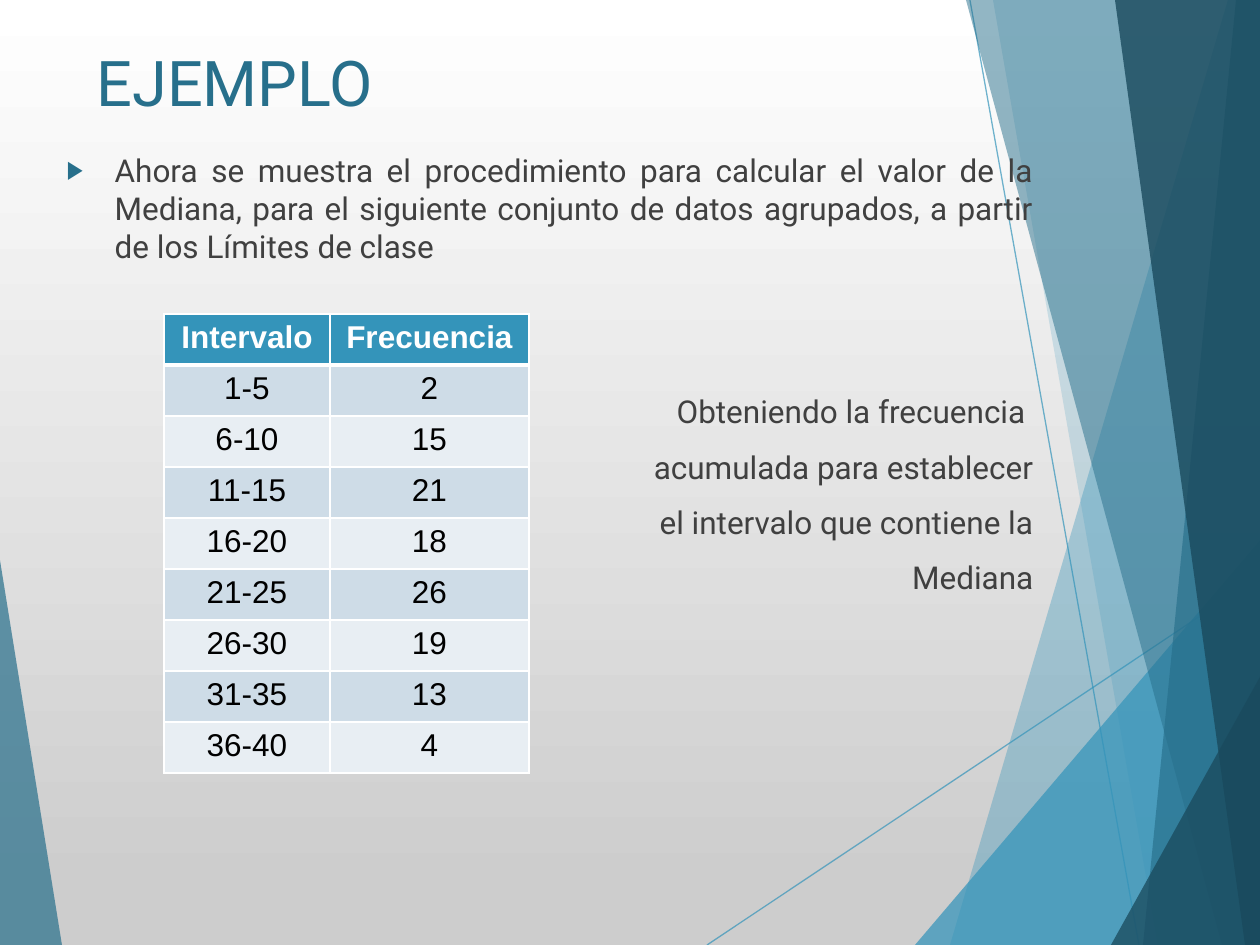
"""Build the slide on the median of grouped data, with its frequency table."""
from dataclasses import dataclass

from lxml.etree import SubElement
from pptx import Presentation
from pptx.dml.color import RGBColor as RGB
from pptx.enum.shapes import MSO_CONNECTOR as LINK
from pptx.enum.text import MSO_ANCHOR as ANCHOR, MSO_AUTO_SIZE as AUTO, PP_ALIGN as ALIGN
from pptx.oxml.ns import qn
from pptx.util import Pt

PX = 914400 / 126
WIDE, HIGH = 1260, 945


@dataclass(frozen=True)
class Theme:
    sky: str = "3494BA"
    teal: str = "276F8B"
    navy: str = "1A4A5D"
    white: str = "FFFFFF"
    grey: str = "CDCDCD"
    text: str = "404040"
    black: str = "000000"
    odd: str = "CEDCE7"
    even: str = "E8EEF3"
    sans: str = "Roboto"
    grid: str = "Arial"
    head: int = 36
    body: int = 18


def fade(shape, pct):
    for tag in shape.element.iter(qn("a:srgbClr")):
        SubElement(tag, qn("a:alpha"), val=str(pct * 1000))


def write(para, words, font, size, color, bold=False):
    run = para.add_run()
    run.text = words
    run.font.name, run.font.size, run.font.bold = font, Pt(size), bold
    run.font.color.rgb = RGB.from_string(color)


look = Theme()
deck = Presentation()
deck.slide_width, deck.slide_height = round(WIDE * PX), round(HIGH * PX)
slide = deck.slides.add_slide(deck.slide_layouts[1])
shapes = slide.shapes
title, body = slide.placeholders

back = slide.background.fill
back.gradient()
back.gradient_angle = 270
for stop, color, place in zip(back.gradient_stops, (look.white, look.grey), (0, 0.94)):
    stop.color.rgb = RGB.from_string(color)
    stop.position = place

for ends in ((707, HIGH, WIDE, 576), (970, 0, 1139, HIGH)):
    line = shapes.add_connector(LINK.STRAIGHT, *(round(n * PX) for n in ends))
    line.line.color.rgb = RGB.from_string(look.sky)
    line.line.width = Pt(0.75)
    SubElement(line.element.spPr, qn("a:effectLst"))
    fade(line, 70)

facets = [
    (look.sky, 36, [(1228, 0), (950, HIGH), (WIDE, HIGH), (WIDE, 0)]),
    (look.sky, 20, [(993, 0), (1158, HIGH), (WIDE, HIGH), (WIDE, 0)]),
    (look.sky, 72, [(915, HIGH), (WIDE, 540), (WIDE, HIGH)]),
    (look.teal, 50, [(966, 0), (1222, HIGH), (WIDE, HIGH), (WIDE, 0)]),
    (look.teal, 66, [(1236, 0), (1143, HIGH), (WIDE, HIGH), (WIDE, 0)]),
    (look.navy, 80, [(1115, 0), (1245, HIGH), (WIDE, HIGH), (WIDE, 0)]),
    (look.navy, 76, [(1111, HIGH), (WIDE, 677), (WIDE, HIGH)]),
    (look.teal, 70, [(0, 560), (62, HIGH), (0, HIGH)]),
]
for color, pct, points in facets:
    pen = shapes.build_freeform(*points[0], scale=PX)
    pen.add_line_segments(points[1:])
    facet = pen.convert_to_shape()
    facet.shadow.inherit = False
    facet.fill.solid()
    facet.fill.fore_color.rgb = RGB.from_string(color)
    facet.line.fill.background()
    fade(facet, pct)

for holder, box in ((title, (84, 37, 874, 181)), (body, (54, 145, 992, 745))):
    holder.left, holder.top, holder.width, holder.height = (round(n * PX) for n in box)
    holder.text_frame.vertical_anchor = ANCHOR.TOP
    holder.text_frame.auto_size = AUTO.NONE
    holder.text_frame.word_wrap = True
    holder.element.getparent().append(holder.element)

para = title.text_frame.paragraphs[0]
para.alignment = ALIGN.LEFT
write(para, "EJEMPLO", look.sans, look.head, look.teal)

para = body.text_frame.paragraphs[0]
para.alignment = ALIGN.JUSTIFY
para.space_before = Pt(10)
write(para, "Ahora se muestra el procedimiento para calcular el valor de la Mediana, "
      "para el siguiente conjunto de datos agrupados, a partir de los Límites de clase",
      look.sans, look.body, look.text)
props = para._p.get_or_add_pPr()
dent = round(48 * PX)
props.set("marL", str(dent))
props.set("indent", str(-dent))
SubElement(SubElement(props, qn("a:buClr")), qn("a:srgbClr"), val=look.teal)
SubElement(props, qn("a:buSzPct"), val="80000")
SubElement(props, qn("a:buFont"), typeface=look.grid)
SubElement(props, qn("a:buChar"), char="▶")

notes = ["Obteniendo la frecuencia ", "acumulada para establecer",
         "el intervalo que contiene la", "Mediana"]
for i, words in enumerate(notes):
    para = body.text_frame.add_paragraph()
    para.alignment = ALIGN.RIGHT
    para.space_before = Pt(10 if i else 73)
    write(para, words, look.sans, look.body, look.text)
    props = para._p.get_or_add_pPr()
    props.set("marL", "0")
    props.set("indent", "0")
    SubElement(props, qn("a:buNone"))

rows = [("Intervalo", "Frecuencia"), ("1-5", "2"), ("6-10", "15"), ("11-15", "21"),
        ("16-20", "18"), ("21-25", "26"), ("26-30", "19"), ("31-35", "13"), ("36-40", "4")]
cols, tall = (166, 199), 51
box = (164, 314, sum(cols), tall * len(rows))
table = shapes.add_table(len(rows), len(cols), *(round(n * PX) for n in box)).table
for col, wide in zip(table.columns, cols):
    col.width = round(wide * PX)
for r, row in enumerate(rows):
    table.rows[r].height = round(tall * PX)
    shade = (look.odd if r % 2 else look.even) if r else look.sky
    for c, words in enumerate(row):
        cell = table.cell(r, c)
        para = cell.text_frame.paragraphs[0]
        para.alignment = ALIGN.CENTER
        write(para, words, look.grid, look.body, look.black if r else look.white, r == 0)
        props = cell._tc.get_or_add_tcPr()
        for side in "LRTB":
            thick = 3 if (r, side) in ((0, "B"), (1, "T")) else 1
            edge = SubElement(props, qn(f"a:ln{side}"), w=str(Pt(thick)))
            SubElement(SubElement(edge, qn("a:solidFill")), qn("a:srgbClr"), val=look.white)
        cell.fill.solid()
        cell.fill.fore_color.rgb = RGB.from_string(shade)

deck.save("out.pptx")
